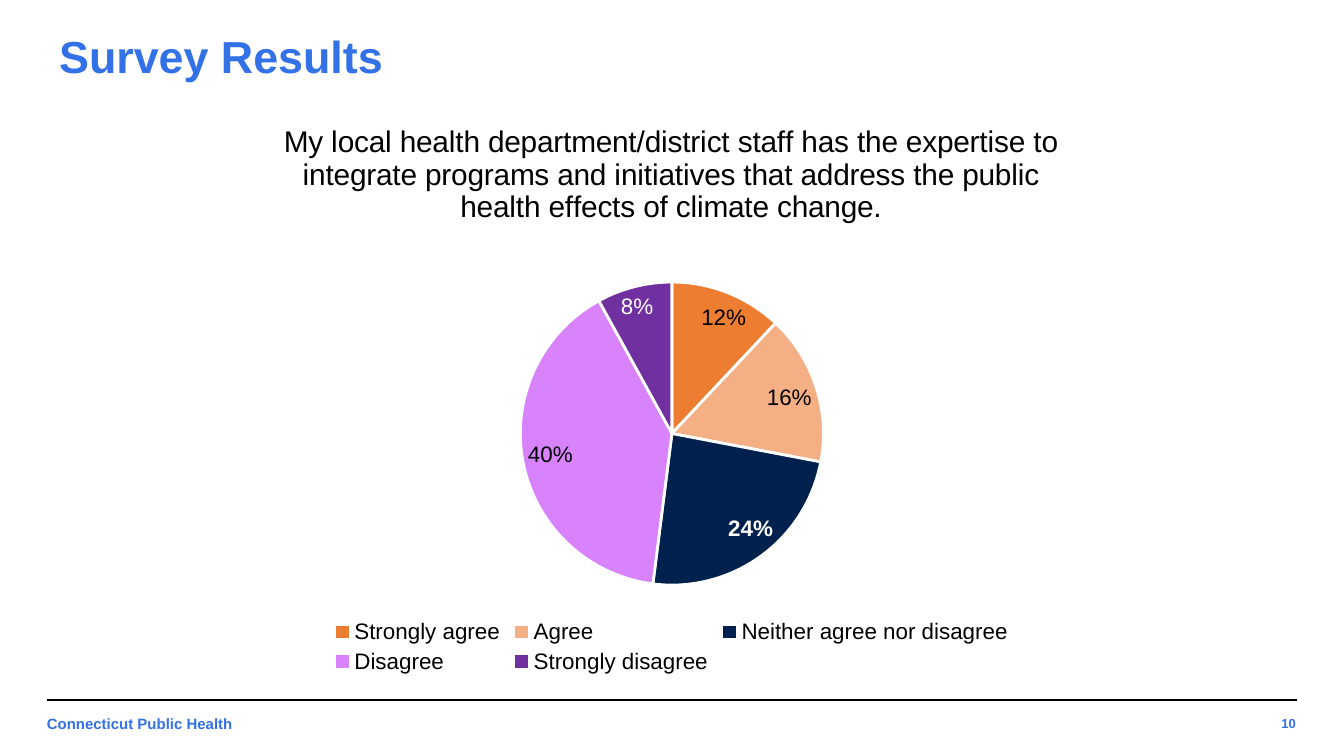
from dataclasses import dataclass

from lxml.etree import SubElement
from pptx import Presentation
from pptx.chart.data import CategoryChartData
from pptx.dml.color import RGBColor
from pptx.enum.chart import XL_CHART_TYPE, XL_LABEL_POSITION, XL_LEGEND_POSITION
from pptx.enum.shapes import MSO_CONNECTOR
from pptx.enum.text import MSO_ANCHOR, PP_ALIGN
from pptx.oxml import parse_xml
from pptx.oxml.ns import nsdecls, qn
from pptx.util import Inches, Pt


@dataclass(frozen=True)
class Theme:
    """Colours, typeface and type sizes of the slide."""
    font: str = "Arial"
    accent: str = "3371E7"
    ink: str = "000000"
    paper: str = "FFFFFF"
    title: int = 24
    question: int = 16
    answer: int = 12
    footer: int = 8
    number: int = 7


THEME = Theme()
QUESTION = (
    "My local health department/district staff has the expertise to "
    "integrate programs and initiatives that address the public\n"
    "health effects of climate change."
)
ANSWERS = [
    ("Strongly agree", 0.12, "ED7D31", THEME.ink, False),
    ("Agree", 0.16, "F4B084", THEME.ink, False),
    ("Neither agree nor disagree", 0.24, "00214D", THEME.paper, True),
    ("Disagree", 0.40, "D883FC", THEME.ink, False),
    ("Strongly disagree", 0.08, "7030A0", THEME.paper, False),
]


def style_font(font, size, color, bold=False):
    """Apply the theme typeface with a size, colour and weight."""
    for name, value in {"name": THEME.font, "size": Pt(size), "bold": bold}.items():
        setattr(font, name, value)
    font.color.rgb = RGBColor.from_string(color)


def write_text(shape, text, size, align=PP_ALIGN.LEFT, anchor=MSO_ANCHOR.MIDDLE):
    """Fill a shape with one bold accent line."""
    frame = shape.text_frame
    frame.text = text
    margins = ("margin_left", "margin_top", "margin_right", "margin_bottom")
    settings = {name: Inches(0.1) for name in margins}
    settings.update(word_wrap=True, vertical_anchor=anchor)
    for name, value in settings.items():
        setattr(frame, name, value)
    paragraph = frame.paragraphs[0]
    paragraph.alignment = align
    style_font(paragraph.runs[0].font, size, THEME.accent, True)


def add_title(slide, text):
    """Place and format the title placeholder."""
    title = slide.shapes.title
    box = {"left": 0.34, "top": 0.25, "width": 9.32, "height": 0.33}
    for name, value in box.items():
        setattr(title, name, Inches(value))
    write_text(title, text, THEME.title)


def add_label(slide, box, text, size, **placement):
    """Add a footer text box."""
    label = slide.shapes.add_textbox(*map(Inches, box))
    write_text(label, text, size, **placement)


def add_rule(slide, left, right, top):
    """Draw the thin line above the footer."""
    ends = map(Inches, (left, top, right, top))
    rule = slide.shapes.add_connector(MSO_CONNECTOR.STRAIGHT, *ends)
    rule.line.width = Pt(0.75)
    rule.line.color.rgb = RGBColor.from_string(THEME.ink)
    SubElement(rule.element.spPr, qn("a:effectLst"))


def make_layout(**fractions):
    """Return a manual chart layout from fractions of the chart area."""
    target = '<c:layoutTarget val="inner"/>' if "w" in fractions else ""
    modes = "".join(f'<c:{key}Mode val="edge"/>' for key in "xy")
    values = "".join(f'<c:{key} val="{value}"/>' for key, value in fractions.items())
    return parse_xml(
        f'<c:layout {nsdecls("c")}><c:manualLayout>{target}{modes}{values}'
        "</c:manualLayout></c:layout>"
    )


def clear_layout(element):
    """Remove the automatic layout of a chart part."""
    for layout in element.findall(qn("c:layout")):
        element.remove(layout)


def format_question(chart):
    """Set the survey question as the chart title."""
    chart.has_title = True
    title = chart.chart_title
    title.include_in_layout = False
    title.text_frame.text = QUESTION
    for paragraph in title.text_frame.paragraphs:
        style_font(paragraph.runs[0].font, THEME.question, THEME.ink)
    element = title._element
    clear_layout(element)
    element.find(qn("c:tx")).addnext(make_layout(x=1 / 8, y=0.03))


def format_legend(chart):
    """Show the answers below the pie."""
    chart.has_legend = True
    chart.legend.position = XL_LEGEND_POSITION.BOTTOM
    chart.legend.include_in_layout = False
    style_font(chart.legend.font, THEME.answer, THEME.ink)


def format_slices(plot):
    """Colour each slice and its percentage."""
    plot.vary_by_categories = True
    series = plot.series[0]
    labels = series.data_labels
    settings = {
        "show_value": True,
        "show_percentage": False,
        "number_format": "0%",
        "number_format_is_linked": False,
        "position": XL_LABEL_POSITION.BEST_FIT,
    }
    for name, value in settings.items():
        setattr(labels, name, value)
    style_font(labels.font, THEME.answer, THEME.paper, True)
    for index, (_, _, fill, label_color, bold) in enumerate(ANSWERS):
        point = series.points[index]
        point.format.fill.solid()
        point.format.fill.fore_color.rgb = RGBColor.from_string(fill)
        point.format.line.width = Pt(1.5)
        point.format.line.color.rgb = RGBColor.from_string(THEME.paper)
        style_font(point.data_label.font, THEME.answer, label_color, bold)
        point.data_label.position = XL_LABEL_POSITION.BEST_FIT


def add_survey_pie(slide, box):
    """Add the pie chart of survey answers."""
    data = CategoryChartData(number_format="0%")
    data.categories = [answer[0] for answer in ANSWERS]
    data.add_series("Series 1", [answer[1] for answer in ANSWERS])
    frame = slide.shapes.add_chart(XL_CHART_TYPE.PIE, *map(Inches, box), data)
    chart = frame.chart
    style_font(chart.font, 10, THEME.ink)
    format_question(chart)
    format_legend(chart)
    format_slices(chart.plots[0])
    plot_area = chart.element.find(f".//{qn('c:plotArea')}")
    clear_layout(plot_area)
    pie_width = 0.29
    plot_area.insert(0, make_layout(x=(1 - pie_width) / 2, y=0.31, w=pie_width, h=0.53))


def main():
    """Build and save the slide."""
    deck = Presentation()
    deck.slide_width = Inches(10)
    deck.slide_height = deck.slide_width * 9 // 16
    slide = deck.slides.add_slide(deck.slide_layouts[5])
    add_label(slide, (9.14, 5.26, 0.6, 0.25), "10", THEME.number, align=PP_ALIGN.RIGHT)
    add_label(slide, (0.25, 5.25, 3.28, 0.34), "Connecticut Public Health",
              THEME.footer, anchor=MSO_ANCHOR.TOP)
    add_rule(slide, 0.35, 9.65, 5.21)
    add_title(slide, "Survey Results")
    add_survey_pie(slide, (1.11, 0.76, 7.78, 4.29))
    deck.save("out.pptx")


if __name__ == "__main__":
    main()
